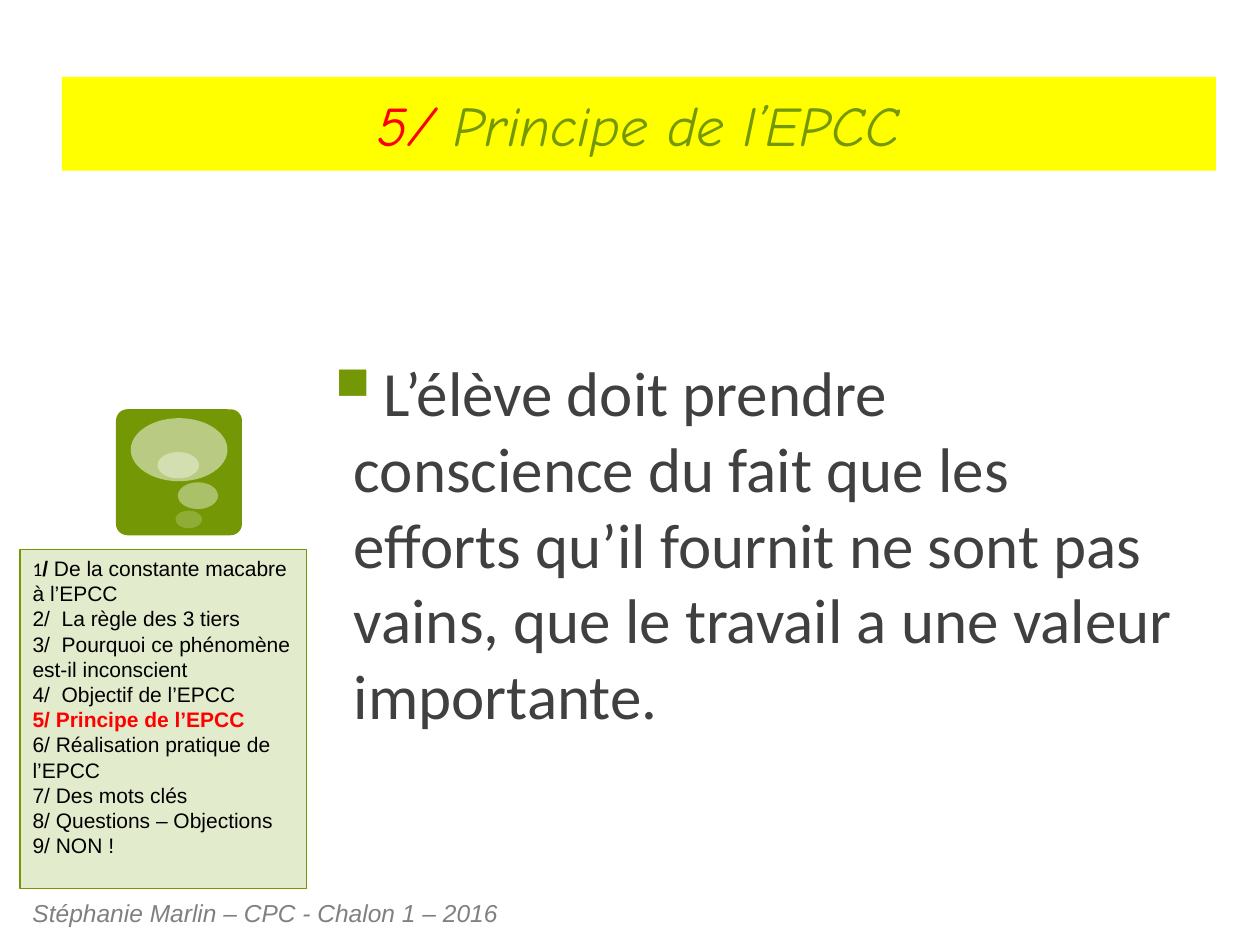
from lxml import etree
from pptx import Presentation
from pptx.dml.color import RGBColor
from pptx.enum import shapes, text
from pptx.oxml import ns
from pptx.util import Pt

GREEN, RED, BLACK = "749805", "FF0000", "000000"
OUTLINE = [
    "De la constante macabre à l’EPCC",
    "2/  La règle des 3 tiers",
    "3/  Pourquoi ce phénomène est-il inconscient",
    "4/  Objectif de l’EPCC",
    "5/ Principe de l’EPCC",
    "6/ Réalisation pratique de l’EPCC",
    "7/ Des mots clés",
    "8/ Questions – Objections",
    "9/ NON !",
]


def color(value):
    return RGBColor.from_string(value)


def add_block(parent, kind, bounds, fill):
    block = parent.add_shape(kind, *map(Pt, bounds))
    block.shadow.inherit = False
    block.fill.solid()
    block.fill.fore_color.rgb = color(fill)
    block.line.fill.background()
    return block


deck = Presentation()
deck.slide_width, deck.slide_height = Pt(720), Pt(540)
page = deck.slides.add_slide(deck.slide_layouts[6])

icon = page.shapes.add_group_shape()
tile = add_block(icon.shapes, shapes.MSO_SHAPE.ROUNDED_RECTANGLE, (66.3, 233.9, 72, 72), GREEN)
tile.adjustments[0] = 0.09
bubbles = [
    ((74.7, 239, 55.3, 36), 50),
    ((101.6, 275.6, 23, 15.3), 40),
    ((100.3, 291.8, 15.1, 10.1), 20),
    ((90, 258.3, 23.8, 15.1), 38),
]
for bounds, opacity in bubbles:
    bubble = add_block(icon.shapes, shapes.MSO_SHAPE.OVAL, bounds, "FFFFFF")
    shade = bubble.fill._xPr.find(".//" + ns.qn("a:srgbClr"))
    etree.SubElement(shade, ns.qn("a:alpha"), val=str(opacity * 1000))

body = page.shapes.add_textbox(Pt(177.1), Pt(198.7), Pt(503.3), Pt(213.1))
body.text_frame.word_wrap = True
para = body.text_frame.paragraphs[0]
para.text = (
    "L’élève doit prendre conscience du fait que les efforts qu’il fournit "
    "ne sont pas vains, que le travail a une valeur importante."
)
para.font.name, para.font.size = "Calibri", Pt(36)
para.font.color.rgb = color("404040")
properties = para._p.get_or_add_pPr()
properties.set("marL", str(Pt(18)))
properties.set("indent", str(Pt(-18)))
bullet_color = etree.Element(ns.qn("a:buClr"))
etree.SubElement(bullet_color, ns.qn("a:srgbClr"), val=GREEN)
bullet_size = etree.Element(ns.qn("a:buSzPct"), val="130000")
bullet_mark = etree.Element(ns.qn("a:buChar"), char="▪")
for position, element in enumerate((bullet_color, bullet_size, bullet_mark)):
    properties.insert(position, element)

title = add_block(page.shapes, shapes.MSO_SHAPE.RECTANGLE, (35.4, 44, 659.5, 53.5), "FFFF00")
title.text_frame.vertical_anchor = text.MSO_ANCHOR.MIDDLE
para = title.text_frame.paragraphs[0]
para.alignment = text.PP_ALIGN.CENTER
para.font.name, para.font.size, para.font.italic = "Comic Neue", Pt(32), True
for wording, tint in (("5/ ", RED), ("Principe de l’EPCC", GREEN)):
    span = para.add_run()
    span.text = wording
    span.font.color.rgb = color(tint)

footer = page.shapes.add_textbox(Pt(11.5), Pt(509.8), Pt(304.6), Pt(24.2))
footer.text_frame.word_wrap = True
para = footer.text_frame.paragraphs[0]
para.text = "Stéphanie Marlin – CPC - Chalon 1 – 2016"
para.font.name, para.font.size, para.font.italic = "Arial", Pt(14), True
para.font.color.rgb = color("808080")

sidebar = add_block(page.shapes, shapes.MSO_SHAPE.RECTANGLE, (11.5, 313.9, 163.7, 193.9), "E3EBCD")
sidebar.line.color.rgb = color(GREEN)
sidebar.line.width = Pt(0.75)
frame = sidebar.text_frame
frame.word_wrap = True
frame.vertical_anchor = text.MSO_ANCHOR.TOP
for number, entry in enumerate(OUTLINE, 1):
    para = frame.paragraphs[0] if number == 1 else frame.add_paragraph()
    para.alignment = text.PP_ALIGN.LEFT
    para.font.name, para.font.size = "Arial", Pt(12)
    para.font.bold = number == 5
    para.font.color.rgb = color(RED if number == 5 else BLACK)
    if number == 1:
        digit, slash = para.add_run(), para.add_run()
        digit.text, slash.text = "1", "/ "
        digit.font.name, digit.font.size = "Calibri", Pt(11)
        slash.font.bold = True
    para.add_run().text = entry

deck.save("out.pptx")
